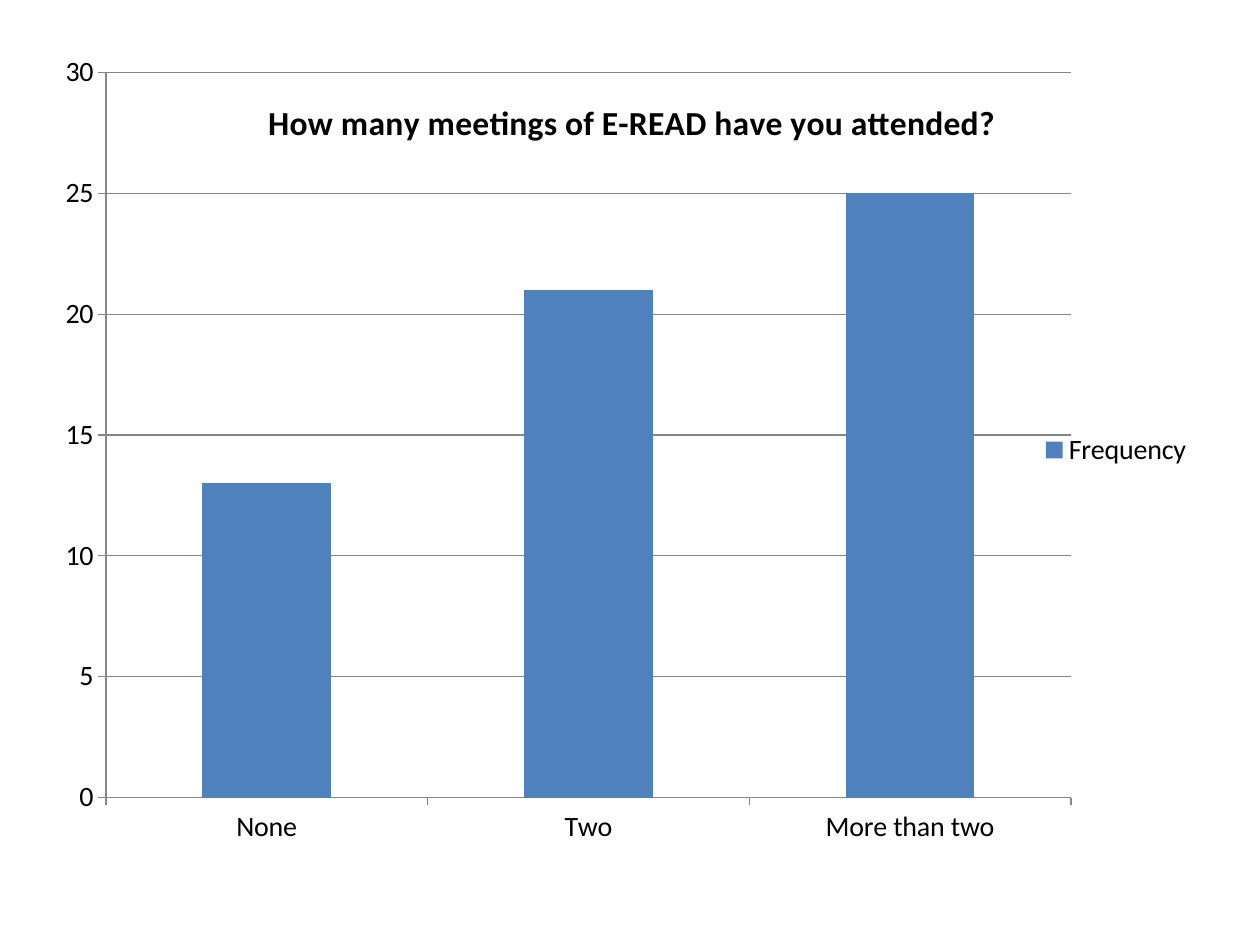
import pptx
import pptx.chart.data
import pptx.dml.color
import pptx.enum.chart
import pptx.oxml
import pptx.oxml.ns
import pptx.util

# Content
TITLE = "How many meetings of E-READ have you attended?"
SERIES = "Frequency"
ANSWERS = {"None": 13, "Two": 21, "More than two": 25}

# Places in inches: left, top, width, height
CHART = (0.5, 0.44, 9.07, 6.26)
PLOT = (0.84, 0.57, 7.66, 5.76)
TITLE_CORNER = (2.08, 0.73)

FONT = "Calibri"
BLACK = pptx.dml.color.RGBColor(0x00, 0x00, 0x00)
BLUE = pptx.dml.color.RGBColor(0x4F, 0x81, 0xBD)
GRAY = pptx.dml.color.RGBColor(0x86, 0x86, 0x86)


def style_font(font, size, bold=False):
    font.name, font.size, font.bold = FONT, pptx.util.Pt(size), bold
    font.color.rgb = BLACK


def style_line(line):
    line.color.rgb = GRAY
    line.width = pptx.util.Pt(0.75)


def chart_shares(place):
    """Turn slide inches into shares of the chart frame."""
    left, top, width, height = CHART
    shares = [(place[0] - left) / width, (place[1] - top) / height]
    return shares + [size / whole for size, whole in zip(place[2:], (width, height))]


def manual_layout(place, inner=False):
    target = '<c:layoutTarget val="inner"/>' if inner else ""
    names = ("x", "y", "w", "h")[:len(place)]
    modes = "".join(f'<c:{name}Mode val="edge"/>' for name in names[:2])
    values = "".join(f'<c:{name} val="{share:.4f}"/>'
                     for name, share in zip(names, chart_shares(place)))
    return pptx.oxml.parse_xml(
        f'<c:layout {pptx.oxml.ns.nsdecls("c")}><c:manualLayout>'
        f'{target}{modes}{values}</c:manualLayout></c:layout>')


def replace_layout(parent, layout, index):
    for old in parent.findall(pptx.oxml.ns.qn("c:layout")):
        parent.remove(old)
    parent.insert(index, layout)


def main():
    deck = pptx.Presentation()
    deck.slide_width, deck.slide_height = pptx.util.Inches(10), pptx.util.Inches(7.5)
    page = deck.slides.add_slide(deck.slide_layouts[6])

    # Column chart
    data = pptx.chart.data.CategoryChartData()
    data.categories = list(ANSWERS)
    data.add_series(SERIES, list(ANSWERS.values()))
    chart = page.shapes.add_chart(
        pptx.enum.chart.XL_CHART_TYPE.COLUMN_CLUSTERED,
        *map(pptx.util.Inches, CHART), data).chart
    style_font(chart.font, 16)
    columns = chart.plots[0]
    columns.gap_width = 150
    columns.vary_by_categories = False
    fill = columns.series[0].format.fill
    fill.solid()
    fill.fore_color.rgb = BLUE

    # Axes and gridlines
    for axis in (chart.category_axis, chart.value_axis):
        axis.major_tick_mark = pptx.enum.chart.XL_TICK_MARK.OUTSIDE
        style_line(axis.format.line)
    scale = chart.value_axis
    scale.minimum_scale, scale.maximum_scale, scale.major_unit = 0, 30, 5
    scale.has_major_gridlines = True
    style_line(scale.major_gridlines.format.line)

    # Legend
    chart.has_legend = True
    chart.legend.position = pptx.enum.chart.XL_LEGEND_POSITION.RIGHT
    chart.legend.include_in_layout = False

    # Title over the plot
    chart.has_title = True
    span = chart.chart_title.text_frame.paragraphs[0].add_run()
    span.text = TITLE
    style_font(span.font, 19.2, bold=True)
    title = chart.chart_title._element
    replace_layout(title, manual_layout(TITLE_CORNER), 1)
    title.get_or_add_tx()
    for overlay in title.findall(pptx.oxml.ns.qn("c:overlay")):
        overlay.set("val", "1")

    # Plot area
    area = chart._chartSpace.chart.plotArea
    replace_layout(area, manual_layout(PLOT, inner=True), 0)

    deck.save("out.pptx")


if __name__ == "__main__":
    main()
